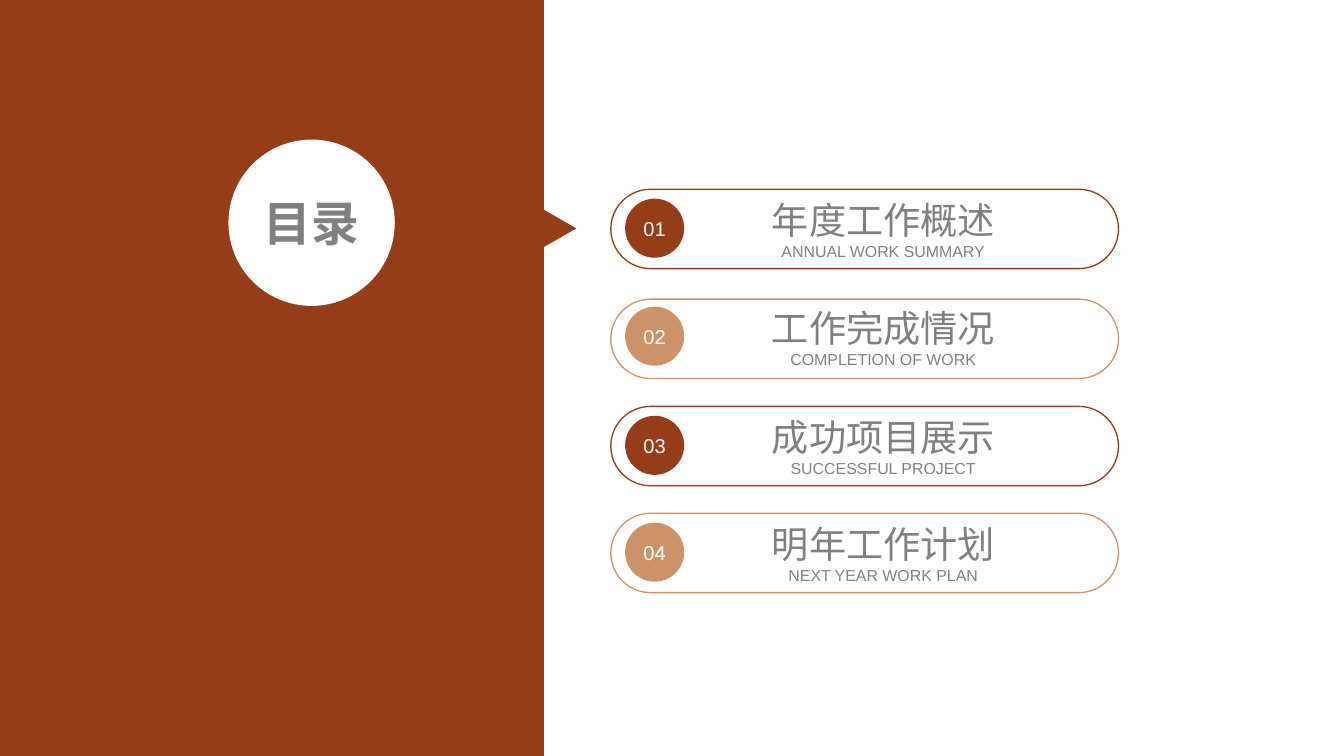
import pptx
import pptx.dml.color
import pptx.enum.shapes
import pptx.enum.text
import pptx.util

Cm = pptx.util.Cm
RGBColor = pptx.dml.color.RGBColor
SHAPE = pptx.enum.shapes.MSO_SHAPE

RUST = RGBColor(0x95, 0x3D, 0x19)
TAN = RGBColor(0xCC, 0x93, 0x6B)
GREY = RGBColor(0x80, 0x80, 0x80)
WHITE = RGBColor(0xFF, 0xFF, 0xFF)

SLIDE_WIDTH, SLIDE_HEIGHT = Cm(35.71), Cm(20.09)
TITLE_CIRCLE = (Cm(6.07), Cm(3.71), Cm(4.42), Cm(4.42))

# Bar top and badge top in centimetres, colour, number, heading, subheading
ENTRIES = [
    (5.03, 5.28, RUST, "01", "年度工作概述", "ANNUAL WORK SUMMARY"),
    (7.95, 8.15, TAN, "02", "工作完成情况", "COMPLETION OF WORK"),
    (10.8, 11.05, RUST, "03", "成功项目展示", "SUCCESSFUL PROJECT"),
    (13.64, 13.89, TAN, "04", "明年工作计划", "NEXT YEAR WORK PLAN"),
]


def add_filled_shape(page, kind, area, colour):
    shape = page.shapes.add_shape(kind, *area)
    shape.shadow.inherit = False
    shape.fill.solid()
    shape.fill.fore_color.rgb = colour
    shape.line.fill.background()
    return shape


def add_outlined_bar(page, area, colour):
    bar = page.shapes.add_shape(SHAPE.ROUNDED_RECTANGLE, *area)
    bar.shadow.inherit = False
    bar.adjustments[0] = 0.5
    bar.fill.background()
    bar.line.color.rgb = colour
    bar.line.width = pptx.util.Pt(1)


def write_lines(shape, lines, colour, margin=0, bold=False):
    """Write centred paragraphs, given as (text, size in points) pairs."""
    frame = shape.text_frame
    frame.word_wrap = True
    frame.auto_size = pptx.enum.text.MSO_AUTO_SIZE.NONE
    frame.vertical_anchor = pptx.enum.text.MSO_ANCHOR.MIDDLE
    frame.margin_left = frame.margin_right = Cm(margin)
    frame.margin_top = frame.margin_bottom = Cm(margin / 2)
    for index, (text, size) in enumerate(lines):
        para = frame.add_paragraph() if index else frame.paragraphs[0]
        para.alignment = pptx.enum.text.PP_ALIGN.CENTER
        span = para.add_run()
        span.text = text
        span.font.name = "Arial"
        span.font.size = pptx.util.Pt(size)
        span.font.bold = bold
        span.font.color.rgb = colour


def add_side_panel(page):
    arrow_area = (Cm(14.22), Cm(5.56), Cm(1.17), Cm(1.02))
    arrow = add_filled_shape(page, SHAPE.ISOSCELES_TRIANGLE, arrow_area, RUST)
    arrow.rotation = 90
    add_filled_shape(page, SHAPE.RECTANGLE, (0, 0, Cm(14.45), SLIDE_HEIGHT), RUST)
    add_filled_shape(page, SHAPE.OVAL, TITLE_CIRCLE, WHITE)


def place_title(page, text):
    """Set the title in front of its white circle."""
    title = page.shapes.title
    title.left, title.top, title.width, title.height = TITLE_CIRCLE
    write_lines(title, [(text, 36)], GREY, margin=0.2, bold=True)
    title.element.getparent().append(title.element)


def add_entry(page, bar_top, badge_top, colour, number, heading, subheading):
    add_outlined_bar(page, (Cm(16.23), Cm(bar_top), Cm(13.49), Cm(2.11)), colour)
    badge_area = (Cm(16.61), Cm(badge_top), Cm(1.57), Cm(1.57))
    badge = add_filled_shape(page, SHAPE.OVAL, badge_area, colour)
    write_lines(badge, [(number, 15.1)], WHITE, margin=0.2)
    box = page.shapes.add_textbox(Cm(20.04), Cm(badge_top - 0.05), Cm(6.86), Cm(1.7))
    write_lines(box, [(heading, 28), (subheading, 12)], GREY)


def main():
    deck = pptx.Presentation()
    deck.slide_width, deck.slide_height = SLIDE_WIDTH, SLIDE_HEIGHT
    page = deck.slides.add_slide(deck.slide_layouts.get_by_name("Title Only"))
    add_side_panel(page)
    place_title(page, "目录")
    for entry in ENTRIES:
        add_entry(page, *entry)
    deck.save("out.pptx")


if __name__ == "__main__":
    main()
